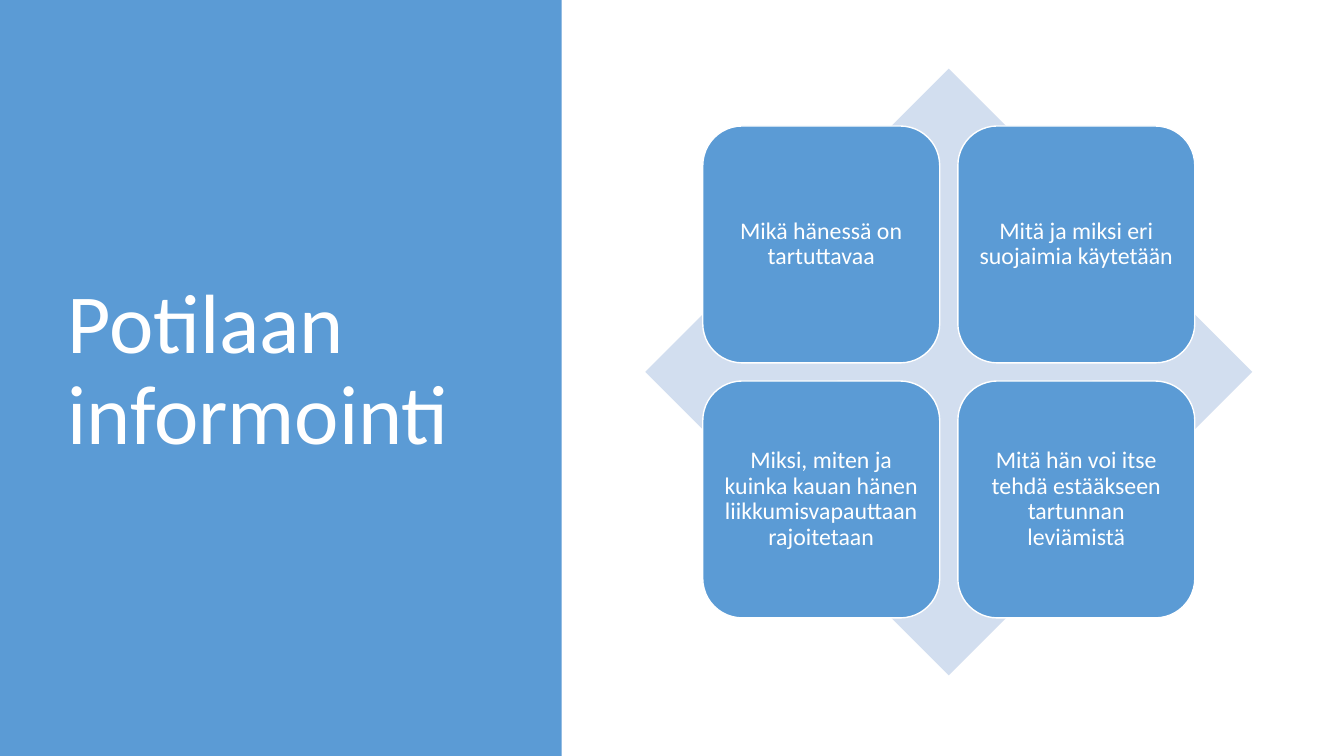
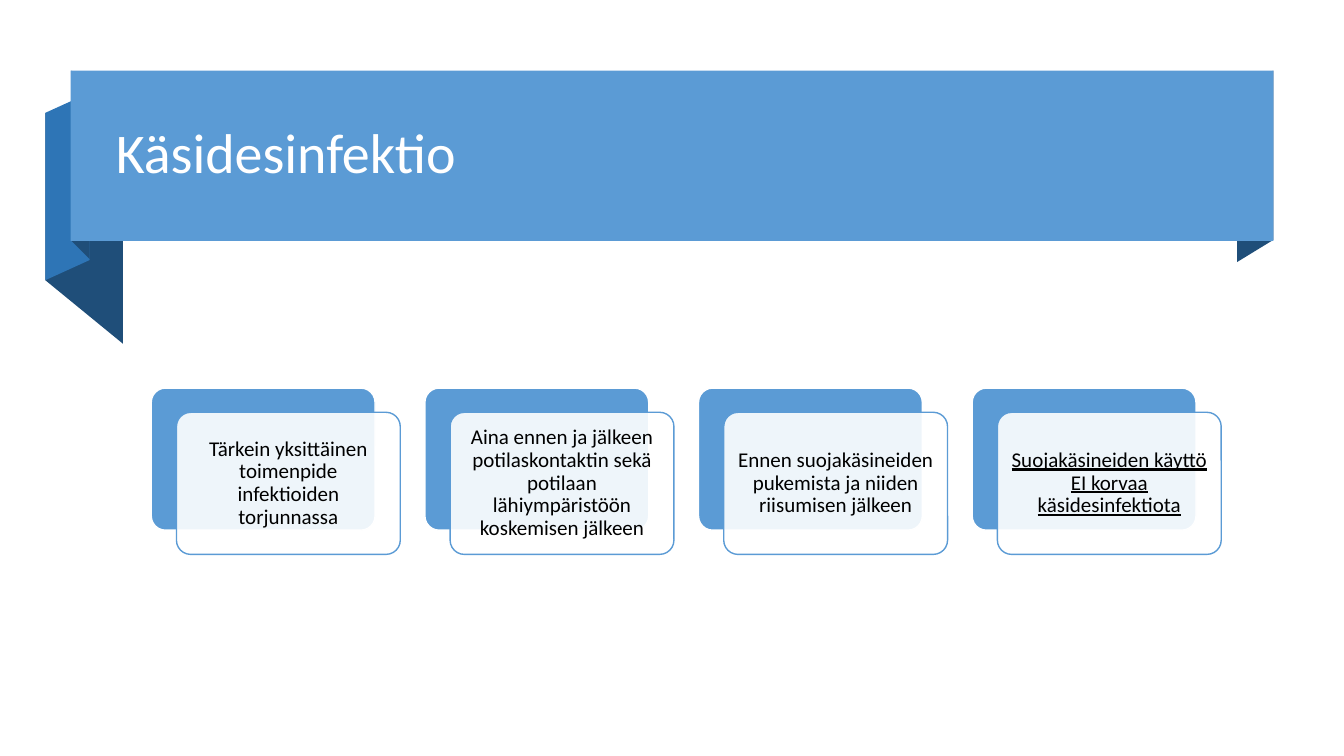
from lxml.etree import SubElement
from pptx import Presentation
from pptx.dml.color import RGBColor
from pptx.enum.shapes import MSO_SHAPE
from pptx.enum.text import MSO_ANCHOR, PP_ALIGN
from pptx.oxml.ns import qn
from pptx.util import Inches, Pt

INK = {
    "blue": "5B9BD5",
    "pale": "D2DEEF",
    "mid": "2E75B6",
    "dark": "1F4E79",
    "white": "FFFFFF",
    "black": "000000",
}
FONT = "Calibri"

TILES = [
    "Mikä hänessä on tartuttavaa",
    "Mitä ja miksi eri suojaimia käytetään",
    "Miksi, miten ja kuinka kauan hänen liikkumisvapauttaan rajoitetaan",
    "Mitä hän voi itse tehdä estääkseen tartunnan leviämistä",
]
CARDS = [
    ("Tärkein yksittäinen toimenpide infektioiden torjunnassa", False),
    ("Aina ennen ja jälkeen potilaskontaktin sekä potilaan lähiympäristöön koskemisen jälkeen", False),
    ("Ennen suojakäsineiden pukemista ja niiden riisumisen jälkeen", False),
    ("Suojakäsineiden käyttö EI korvaa käsidesinfektiota", True),
]
FOLDS = [
    ("dark", [(1.22, 3.41), (0.45, 2.78), (0.45, 1.12), (1.22, 1.75)]),
    ("mid", [(0.89, 2.58), (0.45, 2.78), (0.45, 1.12), (0.89, 0.92)]),
    ("dark", [(0.89, 2.57), (0.71, 2.39), (0.71, 0.7), (0.89, 0.89)]),
    ("dark", [(12.63, 2.38), (12.27, 2.6), (12.27, 0.91), (12.63, 0.7)]),
]


def tint(name):
    return RGBColor.from_string(INK[name])


def paint(shape, fill, line=None, alpha=None):
    shape.shadow.inherit = False
    shape.fill.solid()
    shape.fill.fore_color.rgb = tint(fill)
    if alpha:
        color = shape.fill._xPr.find(qn("a:solidFill"))[0]
        SubElement(color, qn("a:alpha"), val=str(alpha * 1000))
    if line:
        shape.line.color.rgb = tint(line)
        shape.line.width = Pt(1)
    else:
        shape.line.fill.background()
    return shape


def block(slide, kind, box, fill, line=None, alpha=None, round_by=None):
    shape = slide.shapes.add_shape(kind, *map(Inches, box))
    if round_by:
        shape.adjustments[0] = round_by
    return paint(shape, fill, line, alpha)


def fold(slide, fill, points):
    first, *rest = [(Inches(x), Inches(y)) for x, y in points]
    pen = slide.shapes.build_freeform(*first)
    pen.add_line_segments(rest, close=True)
    paint(pen.convert_to_shape(), fill)


def write(shape, words, size, color="white", align=PP_ALIGN.CENTER, pad=None, under=False):
    frame = shape.text_frame
    frame.word_wrap = True
    frame.vertical_anchor = MSO_ANCHOR.MIDDLE
    if pad is not None:
        frame.margin_left = frame.margin_right = Inches(pad)
        frame.margin_top = frame.margin_bottom = Inches(pad)
    para = frame.paragraphs[0]
    para.alignment = align
    para.line_spacing = 0.9
    run = para.add_run()
    run.text = words
    run.font.name = FONT
    run.font.size = Pt(size)
    run.font.color.rgb = tint(color)
    if under:
        run.font.underline = True


def title(slide, words, box, size):
    shape = slide.shapes.add_textbox(*map(Inches, box))
    write(shape, words, size, align=PP_ALIGN.LEFT)


def inform(slide):
    block(slide, MSO_SHAPE.RECTANGLE, (0, 0, 5.57, 7.5), "blue")
    title(slide, "Potilaan informointi", (0.57, 0.68, 4.16, 6.02), 60)
    block(slide, MSO_SHAPE.DIAMOND, (6.4, 0.68, 6.02, 6.02), "pale")
    side, step = 2.35, 2.53
    for i, words in enumerate(TILES):
        row, col = divmod(i, 2)
        box = (6.97 + col * step, 1.25 + row * step, side, side)
        tile = block(slide, MSO_SHAPE.ROUNDED_RECTANGLE, box, "blue", "white")
        write(tile, words, 17, pad=0.07)


def hands(slide):
    for fill, points in FOLDS:
        fold(slide, fill, points)
    block(slide, MSO_SHAPE.RECTANGLE, (0.7, 0.7, 11.93, 1.69), "blue")
    title(slide, "Käsidesinfektio", (1.05, 0.88, 11.23, 1.33), 40)
    wide, high, step = 2.22, 1.41, 2.714
    kind = MSO_SHAPE.ROUNDED_RECTANGLE
    for i, (words, under) in enumerate(CARDS):
        left = 1.5 + i * step
        block(slide, kind, (left, 3.85, wide, high), "blue", "white", round_by=0.1)
        front = (left + 0.25, 4.09, wide, high)
        card = block(slide, kind, front, "white", "blue", alpha=90, round_by=0.1)
        write(card, words, 15, "black", pad=0.06, under=under)


def main():
    deck = Presentation()
    deck.slide_width, deck.slide_height = Inches(13.33), Inches(7.5)
    for build in (inform, hands):
        build(deck.slides.add_slide(deck.slide_layouts[6]))
    deck.save("out.pptx")


if __name__ == "__main__":
    main()
